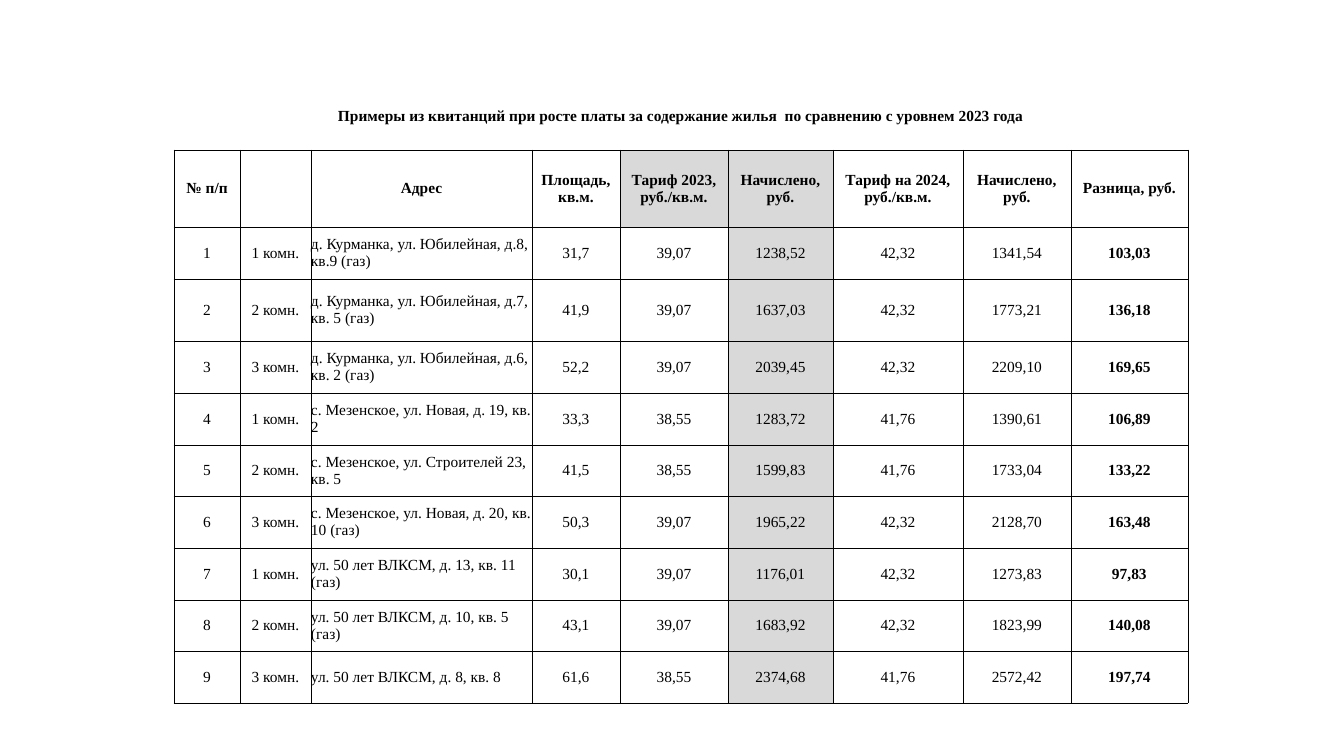
from lxml.etree import SubElement
from pptx import Presentation
from pptx.dml.color import RGBColor
from pptx.enum.text import MSO_ANCHOR, PP_ALIGN
from pptx.oxml.ns import qn
from pptx.util import Emu, Pt

PX = 9071  # EMU per px, 100.8 px to the inch
BLACK = RGBColor(0x00, 0x00, 0x00)
WHITE = RGBColor(0xFF, 0xFF, 0xFF)
GREY = RGBColor(0xD9, 0xD9, 0xD9)
FONT = "Times New Roman"
FONT_SIZE = Pt(11)
SIDES = "LRTB"

TITLE = ("Примеры из квитанций при росте платы за содержание жилья  "
         "по сравнению с уровнем 2023 года")
HEADINGS = ["№ п/п", "", "Адрес", "Площадь, кв.м.", "Тариф 2023, руб./кв.м.",
            "Начислено, руб.", "Тариф на 2024, руб./кв.м.", "Начислено, руб.",
            "Разница, руб."]
# Address, area, 2023 tariff and charge, 2024 tariff and charge, difference
FLATS = [
    ("д. Курманка, ул. Юбилейная, д.8, кв.9 (газ)",
     "31,7", "39,07", "1238,52", "42,32", "1341,54", "103,03"),
    ("д. Курманка, ул. Юбилейная, д.7, кв. 5 (газ)",
     "41,9", "39,07", "1637,03", "42,32", "1773,21", "136,18"),
    ("д. Курманка, ул. Юбилейная, д.6, кв. 2 (газ)",
     "52,2", "39,07", "2039,45", "42,32", "2209,10", "169,65"),
    ("с. Мезенское, ул. Новая, д. 19, кв. 2",
     "33,3", "38,55", "1283,72", "41,76", "1390,61", "106,89"),
    ("с. Мезенское, ул. Строителей 23, кв. 5",
     "41,5", "38,55", "1599,83", "41,76", "1733,04", "133,22"),
    ("с. Мезенское, ул. Новая, д. 20, кв. 10 (газ)",
     "50,3", "39,07", "1965,22", "42,32", "2128,70", "163,48"),
    ("ул. 50 лет ВЛКСМ, д. 13, кв. 11 (газ)",
     "30,1", "39,07", "1176,01", "42,32", "1273,83", "97,83"),
    ("ул. 50 лет ВЛКСМ, д. 10, кв. 5 (газ)",
     "43,1", "39,07", "1683,92", "42,32", "1823,99", "140,08"),
    ("ул. 50 лет ВЛКСМ, д. 8, кв. 8",
     "61,6", "38,55", "2374,68", "41,76", "2572,42", "197,74"),
]
COLUMN_WIDTHS = [66, 71, 221, 88, 108, 105, 130, 108, 117]
ROW_HEIGHTS = [26, 21, 77, 52, 62, 52, 52, 51, 52, 52, 51, 52]
ADDRESS, TARIFF_2023, CHARGE_2023, DIFFERENCE = 2, 4, 5, 8


def px(length):
    return Emu(length * PX)


def write(cell, text, bold=False, align=PP_ALIGN.CENTER):
    cell.margin_left = cell.margin_right = cell.margin_top = cell.margin_bottom = 0
    cell.vertical_anchor = MSO_ANCHOR.MIDDLE
    paragraph = cell.text_frame.paragraphs[0]
    paragraph.alignment = align
    if not text:  # keeps an empty row from growing to the default text size
        paragraph._p.get_or_add_endParaRPr().set("sz", str(int(FONT_SIZE.pt * 100)))
        return
    run = paragraph.add_run()
    run.text = text
    run.font.name = FONT
    run.font.size = FONT_SIZE
    run.font.bold = bold
    run.font.color.rgb = BLACK


def draw_borders(cell, visible):
    properties = cell._tc.get_or_add_tcPr()
    for side in SIDES:
        border = SubElement(properties, qn(f"a:ln{side}"), w=str(Pt(0.5)))
        if side in visible:
            fill = SubElement(border, qn("a:solidFill"))
            SubElement(fill, qn("a:srgbClr"), val=str(BLACK))
        else:
            SubElement(border, qn("a:noFill"))


def format_cell(cell, text, borders=SIDES, fill=WHITE, **text_format):
    write(cell, text, **text_format)
    draw_borders(cell, borders)
    if fill is None:
        cell.fill.background()
    else:
        cell.fill.solid()
        cell.fill.fore_color.rgb = fill


def add_grid(slide, left, top):
    table = slide.shapes.add_table(
        len(ROW_HEIGHTS), len(COLUMN_WIDTHS), px(left), px(top),
        px(sum(COLUMN_WIDTHS)), px(sum(ROW_HEIGHTS))).table
    table.first_row = table.horz_banding = False
    for column, width in zip(table.columns, COLUMN_WIDTHS):
        column.width = px(width)
    for row, height in zip(table.rows, ROW_HEIGHTS):
        row.height = px(height)
    return table


def main():
    prs = Presentation()
    prs.slide_width, prs.slide_height = px(1344), px(756)
    slide = prs.slides.add_slide(prs.slide_layouts[6])
    table = add_grid(slide, 174, 103)

    # Title row across the table, then an empty spacer row
    for column in range(len(HEADINGS)):
        format_cell(table.cell(0, column), "" if column else TITLE,
                    borders="", fill=None, bold=True)
        format_cell(table.cell(1, column), "", borders="B", fill=None)
    table.cell(0, 0).merge(table.cell(0, len(HEADINGS) - 1))

    # Column headings
    for column, heading in enumerate(HEADINGS):
        shaded = column in (TARIFF_2023, CHARGE_2023)
        format_cell(table.cell(2, column), heading, bold=True,
                    fill=GREY if shaded else WHITE)

    # Flats: one-, two- and three-room in turn
    for index, flat in enumerate(FLATS):
        values = (str(index + 1), f"{index % 3 + 1} комн.", *flat)
        for column, value in enumerate(values):
            format_cell(table.cell(index + 3, column), value,
                        bold=column == DIFFERENCE,
                        align=PP_ALIGN.LEFT if column == ADDRESS else PP_ALIGN.CENTER,
                        fill=GREY if column == CHARGE_2023 else WHITE)

    prs.save("out.pptx")


if __name__ == "__main__":
    main()
